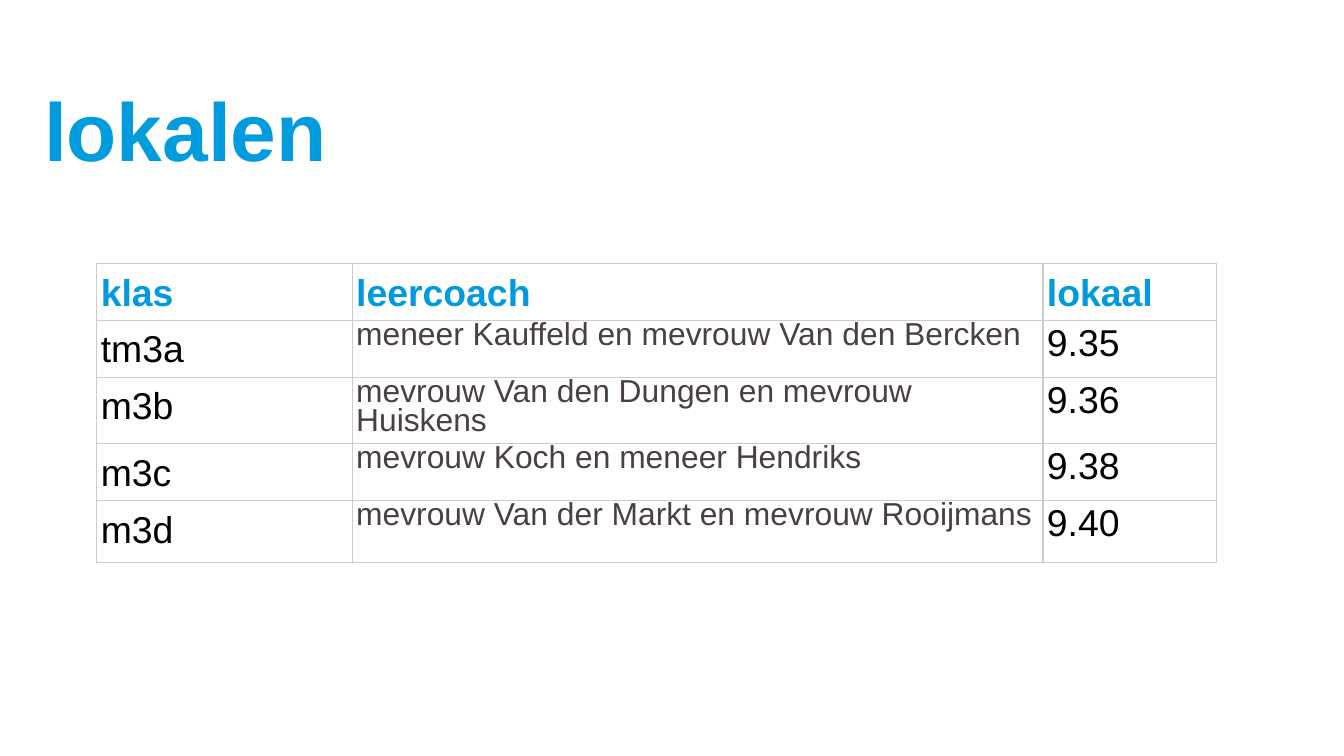
from lxml.etree import SubElement as Sub
from pptx import Presentation
from pptx.dml.color import RGBColor as RGB
from pptx.enum.text import MSO_ANCHOR as Anchor
from pptx.oxml.ns import qn
from pptx.util import Inches, Pt

TITLE = "lokalen"
HEAD = ("klas", "leercoach", "lokaal")
ROWS = [
    ("tm3a", "meneer Kauffeld en mevrouw Van den Bercken", "9.35"),
    ("m3b", "mevrouw Van den Dungen en mevrouw Huiskens", "9.36"),
    ("m3c", "mevrouw Koch en meneer Hendriks", "9.38"),
    ("m3d", "mevrouw Van der Markt en mevrouw Rooijmans", "9.40"),
]
COLOR = {"title": "009CDE", "head": "009ADD", "text": "000000",
         "coach": "49403F", "line": "CCCCCC"}
WIDE = 10
WIDTHS = (1.9, 5.14, 1.29)
HEIGHTS = (0.42, 0.42, 0.42, 0.42, 0.46)
TOP = {"size": 20, "color": "head", "bold": True, "space": 1.15}
STYLES = (
    {"size": 20, "color": "text", "space": 1.15},
    {"size": 17, "color": "coach", "space": 0.8},
    {"size": 20, "color": "text"},
)


def write(frame, text, size, color, bold=False, space=1.0):
    par = frame.paragraphs[0]
    par.line_spacing = space
    run = par.add_run()
    run.text = text
    font = run.font
    font.name, font.size, font.bold = "Arial", Pt(size), bold
    font.color.rgb = RGB.from_string(COLOR[color])


def border(cell):
    props = cell._tc.get_or_add_tcPr()
    for i, side in enumerate(("lnL", "lnR", "lnT", "lnB")):
        line = props.makeelement(qn(f"a:{side}"), {"w": str(Pt(0.75))})
        fill = Sub(line, qn("a:solidFill"))
        Sub(fill, qn("a:srgbClr"), val=COLOR["line"])
        props.insert(i, line)


deck = Presentation()
deck.slide_width, deck.slide_height = Inches(WIDE), Inches(WIDE * 9 / 16)
slide = deck.slides.add_slide(deck.slide_layouts[6])

box = slide.shapes.add_textbox(Inches(0.23), Inches(0.53), Inches(9.14), Inches(0.82))
frame = box.text_frame
frame.word_wrap = True
frame.vertical_anchor = Anchor.BOTTOM
frame.margin_bottom = Inches(0.03)
write(frame, TITLE, size=44, color="title", bold=True)

data = [HEAD] + ROWS
table = slide.shapes.add_table(len(data), len(HEAD), Inches(0.72), Inches(1.96),
                               Inches(sum(WIDTHS)), Inches(sum(HEIGHTS))).table
table.horz_banding = table.first_row = False
for col, wide in zip(table.columns, WIDTHS):
    col.width = Inches(wide)
for r, row in enumerate(data):
    table.rows[r].height = Inches(HEIGHTS[r])
    for c, text in enumerate(row):
        cell = table.cell(r, c)
        cell.margin_left = cell.margin_right = Inches(0.03)
        cell.margin_top = cell.margin_bottom = Inches(0.02)
        cell.fill.background()
        border(cell)
        write(cell.text_frame, text, **(STYLES[c] if r else TOP))

deck.save("out.pptx")
